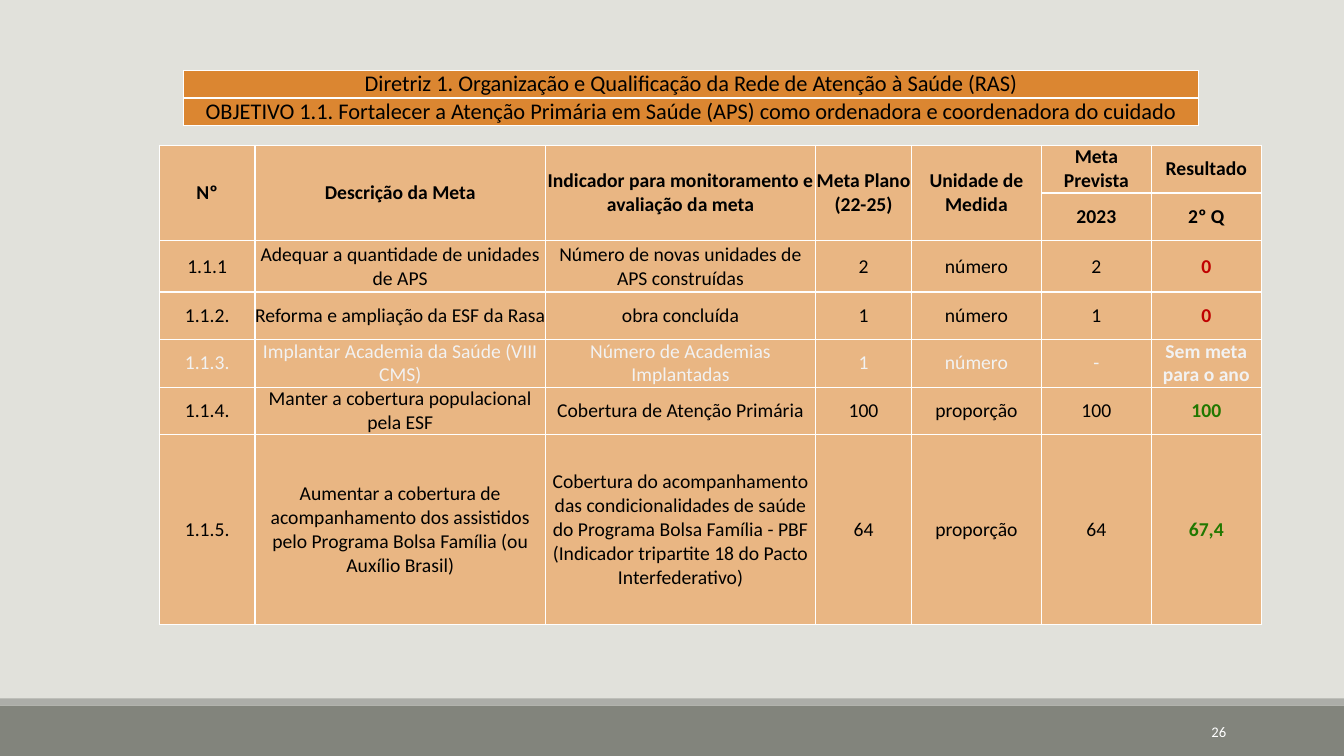
from lxml import etree
from pptx import Presentation
from pptx.dml.color import RGBColor
from pptx.enum.shapes import MSO_SHAPE
from pptx.enum.text import MSO_ANCHOR, PP_ALIGN
from pptx.oxml.ns import qn
from pptx.util import Inches, Pt

RECT = MSO_SHAPE.RECTANGLE
MIDDLE = MSO_ANCHOR.MIDDLE
CENTER, RIGHT = PP_ALIGN.CENTER, PP_ALIGN.RIGHT

BLACK, WHITE, PALE = "000000", "FFFFFF", "F2F2F2"
RED, GREEN = "C00000", "217800"
ORANGE, PEACH = "DB8631", "E9B683"

TITLES = [
    ["Diretriz 1. Organização e Qualificação da Rede de Atenção à Saúde (RAS)"],
    ["OBJETIVO 1.1. Fortalecer a Atenção Primária em Saúde (APS) como ordenadora e coordenadora do cuidado"],
]
HEADER = [
    ["Nº", "Descrição da Meta", "Indicador para monitoramento e avaliação da meta",
     "Meta Plano (22-25)", "Unidade de Medida", "Meta Prevista", "Resultado"],
    ["", "", "", "", "", "2023", "2º Q"],
]
GOALS = [
    ["1.1.1", "Adequar a quantidade de unidades de APS",
     "Número de novas unidades de APS construídas", "2", "número", "2", "0"],
    ["1.1.2.", "Reforma e ampliação da ESF da Rasa",
     "obra concluída", "1", "número", "1", "0"],
    ["1.1.3.", "Implantar Academia da Saúde (VIII CMS)",
     "Número de Academias Implantadas", "1", "número", "-", "Sem meta para o ano"],
    ["1.1.4.", "Manter a cobertura populacional pela ESF",
     "Cobertura de Atenção Primária", "100", "proporção", "100", "100"],
    ["1.1.5.", "Aumentar a cobertura de acompanhamento dos assistidos pelo Programa Bolsa Família (ou Auxílio Brasil)",
     "Cobertura do acompanhamento das condicionalidades de saúde do Programa Bolsa Família - PBF "
     "(Indicador tripartite 18 do Pacto Interfederativo)", "64", "proporção", "64", "67,4"],
]
GOAL_COLORS = [BLACK, BLACK, PALE, BLACK, BLACK]
RESULT_COLORS = [RED, RED, PALE, GREEN, GREEN]
GOAL_COLS = [0.95, 2.88, 2.68, 0.95, 1.29, 1.09, 1.09]
GOAL_ROWS = [0.47, 0.47, 0.51, 0.47, 0.47, 0.47, 1.88]


def rgb(value):
    return RGBColor.from_string(value)


class Deck:
    font = "Calibri"

    def __init__(self, prs, background):
        self.s = prs.slides.add_slide(prs.slide_layouts[6])
        fill = self.s.background.fill
        fill.solid()
        fill.fore_color.rgb = rgb(background)

    def add_text(self, tf, text, size, color, bold=False, align=CENTER):
        p = tf.paragraphs[0]
        p.alignment = align
        r = p.add_run()
        r.text = text
        r.font.name = self.font
        r.font.size = Pt(size)
        r.font.bold = bold
        r.font.color.rgb = rgb(color)

    def bar(self, x, y, w, h, color):
        sp = self.s.shapes.add_shape(RECT, Inches(x), Inches(y), Inches(w), Inches(h))
        sp.shadow.inherit = False
        sp.fill.solid()
        sp.fill.fore_color.rgb = rgb(color)
        sp.line.fill.background()

    def label(self, x, y, w, h, text, size, color, align):
        sp = self.s.shapes.add_textbox(Inches(x), Inches(y), Inches(w), Inches(h))
        tf = sp.text_frame
        tf.word_wrap = True
        tf.vertical_anchor = MIDDLE
        self.add_text(tf, text, size, color, align=align)

    def border(self, cell, color, width):
        tc_pr = cell._tc.get_or_add_tcPr()
        for side in ("a:lnL", "a:lnR", "a:lnT", "a:lnB"):
            ln = etree.SubElement(tc_pr, qn(side), w=str(Pt(width)))
            fill = etree.SubElement(ln, qn("a:solidFill"))
            etree.SubElement(fill, qn("a:srgbClr"), val=color)

    def table(self, x, y, cols, rows, texts, fill, size, style):
        frame = self.s.shapes.add_table(len(rows), len(cols), Inches(x), Inches(y),
                                        Inches(sum(cols)), Inches(sum(rows)))
        table = frame.table
        for col, width in zip(table.columns, cols):
            col.width = Inches(width)
        for row, height in zip(table.rows, rows):
            row.height = Inches(height)
        for i, line in enumerate(texts):
            for j, text in enumerate(line):
                cell = table.cell(i, j)
                cell.margin_left = cell.margin_right = 0
                cell.margin_top = cell.margin_bottom = 0
                cell.vertical_anchor = MIDDLE
                self.border(cell, WHITE, 1)
                cell.fill.solid()
                cell.fill.fore_color.rgb = rgb(fill)
                if text:
                    color, bold = style(i, j)
                    self.add_text(cell.text_frame, text, size, color, bold)
        return table


def title_style(row, col):
    return BLACK, False


def goal_style(row, col):
    goal = row - len(HEADER)
    if goal < 0:
        return BLACK, True
    if col == len(GOAL_COLS) - 1:
        return RESULT_COLORS[goal], True
    return GOAL_COLORS[goal], False


def main():
    prs = Presentation()
    prs.slide_width, prs.slide_height = Inches(13.33), Inches(7.5)
    deck = Deck(prs, "E1E1DB")
    deck.bar(0, 7, 13.33, 0.5, "82847C")
    deck.bar(0, 6.93, 13.33, 0.07, "ACADA8")
    deck.table(1.82, 0.7, [10.07], [0.27, 0.27], TITLES, ORANGE, 16, title_style)
    goals = deck.table(1.58, 1.44, GOAL_COLS, GOAL_ROWS, HEADER + GOALS, PEACH, 14, goal_style)
    for col, text in enumerate(HEADER[1]):
        if not text:
            goals.cell(0, col).merge(goals.cell(1, col))
    deck.label(10.83, 7.06, 1.43, 0.4, "26", 10.5, WHITE, RIGHT)
    prs.save("out.pptx")


if __name__ == "__main__":
    main()
